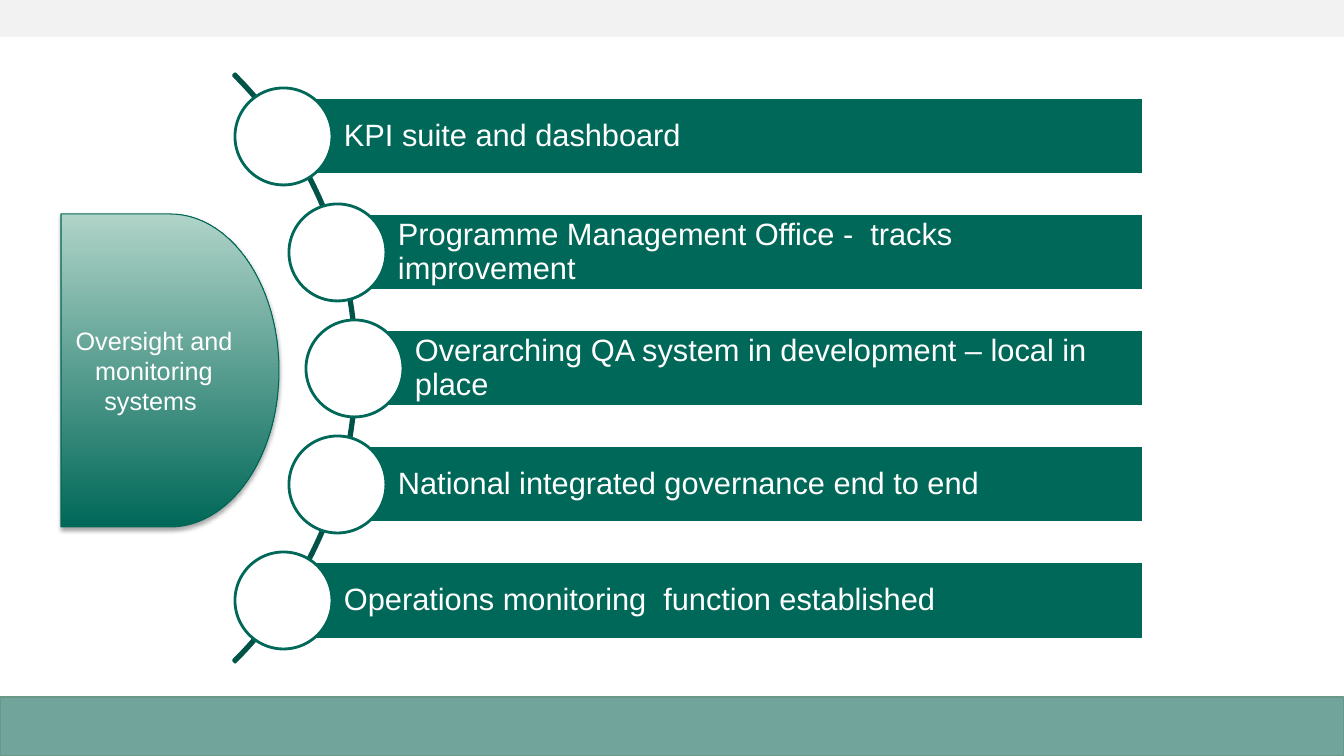
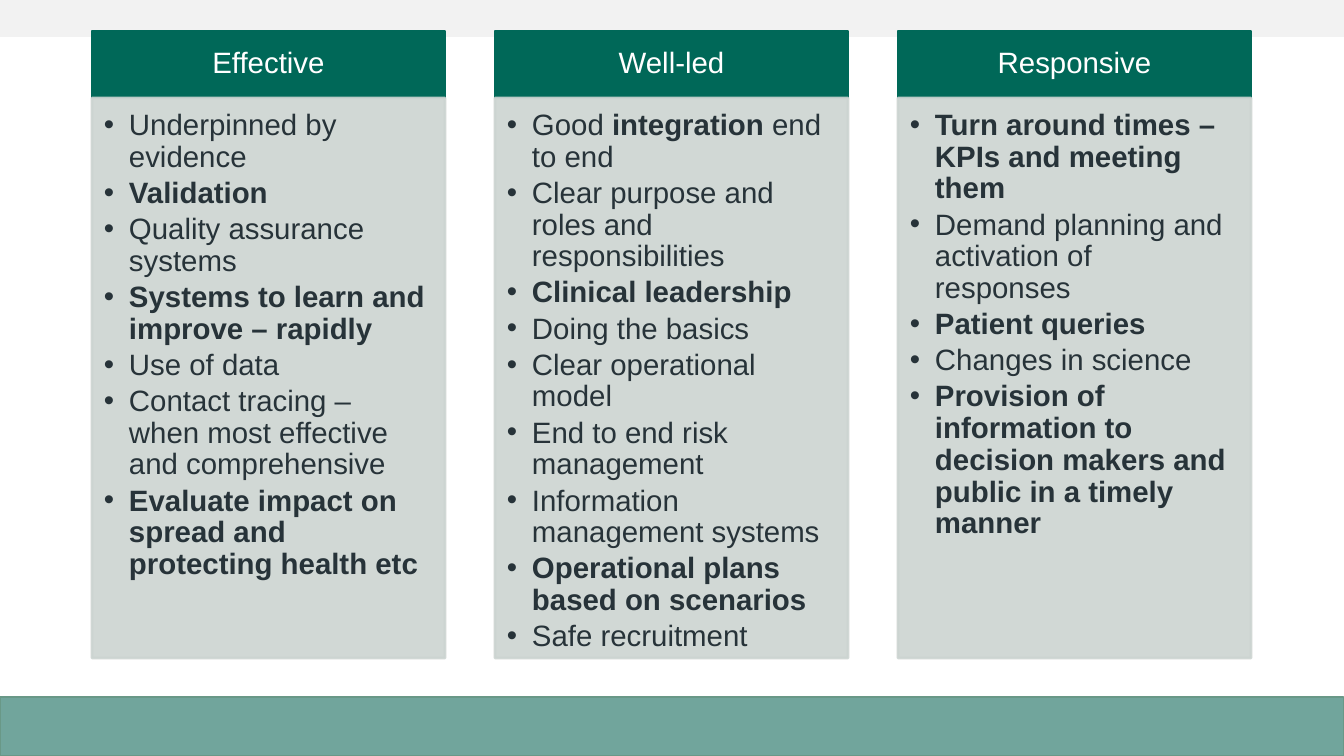
import math

import pptx
import pptx.dml.color
import pptx.enum.shapes
import pptx.enum.text
import pptx.oxml.ns
import pptx.util
from lxml import etree

PRESET = pptx.enum.shapes.MSO_SHAPE
ALIGN = pptx.enum.text.PP_ALIGN
ANCHOR = pptx.enum.text.MSO_ANCHOR
qn = pptx.oxml.ns.qn

PX_PER_INCH = 100.8
SLIDE_W, SLIDE_H = 1344, 756
FONT = "Arial"

GREEN, DARK_GREEN, PALE_GREEN = "006858", "005346", "B0D3C8"
WHITE, INK, PANEL_GREY = "FFFFFF", "273339", "CCD4D1"

# Slide 1: the nodes sit on an arc around a centre left of the slide
ARC_X, ARC_Y, ARC_RADIUS, NODE_RADIUS = -59, 368, 416, 413
NODE_SIZE, NODE_STEP = 97, 116
BAR_RIGHT, BAR_HEIGHT = 1143, 77
OVERSIGHT_ITEMS = [
    "KPI suite and dashboard",
    "Programme Management Office -  tracks improvement",
    "Overarching QA system in development – local in place",
    "National integrated governance end to end",
    "Operations monitoring  function established",
]

# Slide 2: three equal columns; ** switches bold on and off
COLUMN_LEFT, COLUMN_STEP, COLUMN_WIDTH = 92, 403, 353
HEADING_TOP, HEADING_HEIGHT, PANEL_HEIGHT = 31, 67, 560
QUALITIES = {
    "Effective": [
        "Underpinned by evidence",
        "**Validation**",
        "Quality assurance systems",
        "**Systems to learn and improve – rapidly**",
        "Use of data",
        "Contact tracing – when most effective and comprehensive",
        "**Evaluate impact on spread and protecting health etc**",
    ],
    "Well-led": [
        "Good **integration** end to end",
        "Clear purpose and roles and responsibilities",
        "**Clinical leadership**",
        "Doing the basics",
        "Clear operational model",
        "End to end risk management",
        "Information management systems",
        "**Operational plans based on scenarios**",
        "Safe recruitment",
    ],
    "Responsive": [
        "**Turn around times – KPIs and meeting them**",
        "Demand planning and activation of responses",
        "**Patient queries**",
        "Changes in science",
        "**Provision of information to decision makers and public in a timely manner**",
    ],
}


def px(length):
    return pptx.util.Emu(round(length * 914400 / PX_PER_INCH))


def rgb(hex_code):
    return pptx.dml.color.RGBColor.from_string(hex_code)


def add_box(slide, preset, left, top, width, height, fill=None, line=None, line_pt=2):
    shape = slide.shapes.add_shape(preset, px(left), px(top), px(width), px(height))
    shape.shadow.inherit = False
    if fill:
        shape.fill.solid()
        shape.fill.fore_color.rgb = rgb(fill)
    else:
        shape.fill.background()
    if line:
        shape.line.color.rgb = rgb(line)
        shape.line.width = pptx.util.Pt(line_pt)
    else:
        shape.line.fill.background()
    return shape


def set_frame(shape, anchor, insets):
    frame = shape.text_frame
    frame.word_wrap = True
    frame.vertical_anchor = anchor
    (frame.margin_left, frame.margin_top,
     frame.margin_right, frame.margin_bottom) = map(px, insets)
    return frame


def add_runs(paragraph, marked_text, size, color):
    for i, text in enumerate(marked_text.split("**")):
        if text:
            run = paragraph.add_run()
            run.text = text
            run.font.name = FONT
            run.font.size = pptx.util.Pt(size)
            run.font.bold = i % 2 == 1
            run.font.color.rgb = rgb(color)


def write_label(shape, text, size, align, insets, spacing=0.9):
    paragraph = set_frame(shape, ANCHOR.MIDDLE, insets).paragraphs[0]
    paragraph.alignment = align
    paragraph.line_spacing = spacing
    add_runs(paragraph, text, size, WHITE)


def write_bullets(shape, items):
    frame = set_frame(shape, ANCHOR.TOP, (12, 12, 16, 18))
    for i, item in enumerate(items):
        paragraph = frame.paragraphs[0] if i == 0 else frame.add_paragraph()
        properties = paragraph._p.get_or_add_pPr()
        properties.set("marL", str(px(25)))
        properties.set("indent", str(-px(25)))
        etree.SubElement(properties, qn("a:buFont"), typeface=FONT)
        etree.SubElement(properties, qn("a:buChar"), char="•")
        paragraph.level = 1
        paragraph.alignment = ALIGN.LEFT
        paragraph.line_spacing = 0.9
        paragraph.space_after = pptx.util.Pt(3.15)
        add_runs(paragraph, item, 21, INK)


def set_opacity(shape, percent):
    for color in shape.element.spPr.iter(qn("a:srgbClr")):
        etree.SubElement(color, qn("a:alpha"), val=str(percent * 1000))


def add_drop_shadow(shape):
    effects = shape.element.spPr.find(qn("a:effectLst"))
    shadow = etree.SubElement(
        effects, qn("a:outerShdw"), blurRad=str(pptx.util.Pt(3.1)),
        dist=str(pptx.util.Pt(1.8)), dir="5400000", rotWithShape="0")
    color = etree.SubElement(shadow, qn("a:srgbClr"), val="000000")
    etree.SubElement(color, qn("a:alpha"), val="35000")


def put_bands_on_layout(layout, slide):
    """Draw the top and bottom bands, then move them to the shared layout."""
    for placeholder in list(layout.placeholders):
        layout.shapes.element.remove(placeholder.element)
    bands = [
        add_box(slide, PRESET.RECTANGLE, 0, 0, SLIDE_W, 37, "F2F2F2"),
        add_box(slide, PRESET.RECTANGLE, 0, 697, SLIDE_W, 59, "71A59C", "699887", 0.75),
    ]
    for band in bands:
        layout.shapes.element.append(band.element)


def build_oversight(slide):
    # Arc behind the nodes
    arc = add_box(slide, PRESET.BLOCK_ARC, ARC_X - ARC_RADIUS, ARC_Y - ARC_RADIUS,
                  2 * ARC_RADIUS, 2 * ARC_RADIUS, line=DARK_GREEN)
    for i, value in enumerate((189, 27, 0.003)):
        arc.adjustments[i] = value

    # Bars, each starting at the centre of its node
    for i, item in enumerate(OVERSIGHT_ITEMS):
        offset = (i - len(OVERSIGHT_ITEMS) // 2) * NODE_STEP
        node_x = ARC_X + round(math.sqrt(NODE_RADIUS ** 2 - offset ** 2))
        node_y = ARC_Y + offset
        bar = add_box(slide, PRESET.RECTANGLE, node_x, node_y - BAR_HEIGHT // 2,
                      BAR_RIGHT - node_x, BAR_HEIGHT, GREEN, WHITE)
        write_label(bar, item, 22, ALIGN.LEFT, (61, 6, 6, 6))
        add_box(slide, PRESET.OVAL, node_x - NODE_SIZE // 2, node_y - NODE_SIZE // 2,
                NODE_SIZE, NODE_SIZE, WHITE, GREEN)

    # Topic on the left
    topic = add_box(slide, PRESET.FLOWCHART_DELAY, 61, 214, 218, 313, GREEN, "006656", 0.75)
    topic.fill.gradient()
    topic.fill.gradient_angle = 90
    for stop, color in zip(topic.fill.gradient_stops, (GREEN, PALE_GREEN)):
        stop.color.rgb = rgb(color)
    add_drop_shadow(topic)
    write_label(topic, "Oversight and monitoring systems ", 18, ALIGN.CENTER,
                (10, 5, 10, 5), spacing=1.0)


def build_qualities(slide):
    for i, (quality, items) in enumerate(QUALITIES.items()):
        left = COLUMN_LEFT + i * COLUMN_STEP
        heading = add_box(slide, PRESET.RECTANGLE, left, HEADING_TOP,
                          COLUMN_WIDTH, HEADING_HEIGHT, GREEN, GREEN)
        write_label(heading, quality, 21, ALIGN.CENTER, (16, 9, 16, 9))
        panel = add_box(slide, PRESET.RECTANGLE, left, HEADING_TOP + HEADING_HEIGHT,
                        COLUMN_WIDTH, PANEL_HEIGHT, PANEL_GREY, PANEL_GREY)
        set_opacity(panel, 90)
        write_bullets(panel, items)


def main():
    deck = pptx.Presentation()
    deck.slide_width, deck.slide_height = px(SLIDE_W), px(SLIDE_H)
    layout = deck.slide_layouts[6]
    oversight = deck.slides.add_slide(layout)
    put_bands_on_layout(layout, oversight)
    build_oversight(oversight)
    build_qualities(deck.slides.add_slide(layout))
    deck.save("out.pptx")


if __name__ == "__main__":
    main()
